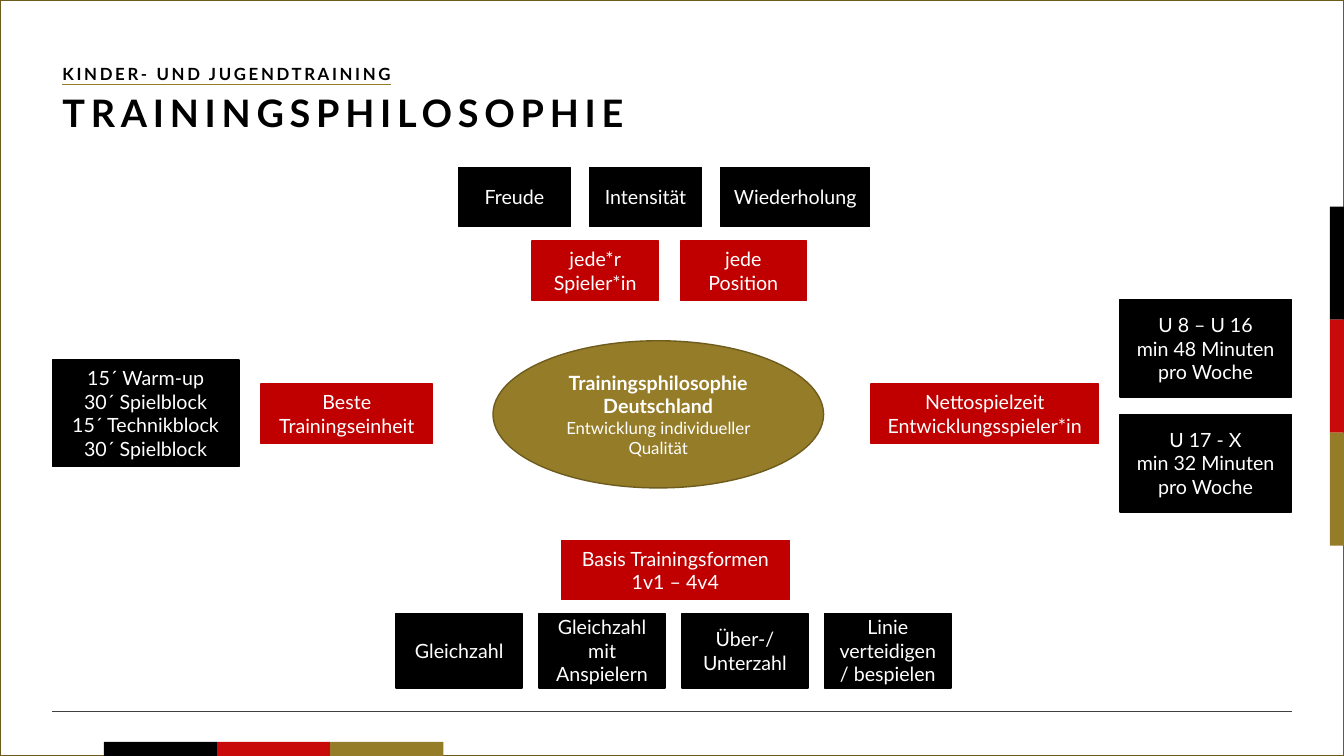
import dataclasses

import lxml.etree
import pptx
import pptx.dml.color
import pptx.enum.shapes
import pptx.enum.text
import pptx.oxml.ns
import pptx.util

SLIDE_WIDTH = pptx.util.Inches(13.33)
SLIDE_HEIGHT = pptx.util.Inches(7.5)
BLACK, RED, GOLD, WHITE = "000000", "C00000", "957C28", "FFFFFF"
FLAG_RED, DARK_GOLD, RULE_GREY = "C80A0A", "6E5C1E", "404040"
LABEL_HEIGHT = 7.87
NARROW, MEDIUM, WIDE = 9.38, 12.75, 16.95
SHAPES = pptx.enum.shapes.MSO_SHAPE
ALIGN = pptx.enum.text.PP_ALIGN
ANCHOR = pptx.enum.text.MSO_ANCHOR


@dataclasses.dataclass
class PercentBox:
    left: float
    top: float
    width: float
    height: float

    def inner(self, left, top, width, height):
        return PercentBox(self.left + left, self.top + top, width, height)

    def lengths(self):
        return (
            round(SLIDE_WIDTH * self.left / 100),
            round(SLIDE_HEIGHT * self.top / 100),
            round(SLIDE_WIDTH * self.width / 100),
            round(SLIDE_HEIGHT * self.height / 100),
        )


def colour(value):
    return pptx.dml.color.RGBColor.from_string(value)


def add_text(frame, text, size=14, color=WHITE, bold=False, align=ALIGN.CENTER,
             tracking=None, underline=None, line_spacing=None):
    para = frame.paragraphs[0]
    if para.runs:
        para = frame.add_paragraph()
    para.alignment = align
    para.space_before = pptx.util.Pt(0)
    if line_spacing:
        para.line_spacing = line_spacing
    span = para.add_run()
    span.text = text
    span.font.name = "Lato"
    span.font.size = pptx.util.Pt(size)
    span.font.bold = bold
    span.font.color.rgb = colour(color)
    properties = span._r.get_or_add_rPr()
    if tracking:
        properties.set("spc", str(round(tracking * 100)))
    if underline:
        span.font.underline = True
        qn = pptx.oxml.ns.qn
        line_fill = lxml.etree.Element(qn("a:uFill"))
        solid = lxml.etree.SubElement(line_fill, qn("a:solidFill"))
        lxml.etree.SubElement(solid, qn("a:srgbClr")).set("val", underline)
        properties.find(qn("a:solidFill")).addnext(line_fill)


def add_block(page, box, fill=None, line=None, kind=SHAPES.RECTANGLE):
    block = page.shapes.add_shape(kind, *box.lengths())
    block.shadow.inherit = False
    if fill:
        block.fill.solid()
        block.fill.fore_color.rgb = colour(fill)
    else:
        block.fill.background()
    if line:
        block.line.color.rgb = colour(line)
        block.line.width = pptx.util.Pt(1)
    else:
        block.line.fill.background()
    block.text_frame.word_wrap = True
    block.text_frame.vertical_anchor = ANCHOR.MIDDLE
    return block


def add_label(page, box, lines, fill):
    label = add_block(page, box, fill, fill)
    for line in lines:
        add_text(label.text_frame, line)


def add_row(page, box, labels, widths, fill):
    gap = (box.width - sum(widths)) / (len(labels) - 1)
    left = 0
    for lines, width in zip(labels, widths):
        add_label(page, box.inner(left, 0, width, box.height), lines, fill)
        left += width + gap


def draw_flag(page, box, vertical):
    for index, fill in enumerate((BLACK, FLAG_RED, GOLD)):
        if vertical:
            height = box.height / 3
            stripe = box.inner(0, index * height, box.width, height)
        else:
            width = box.width / 3
            stripe = box.inner(index * width, 0, width, box.height)
        add_block(page, stripe, fill)


def draw_frame(page, box):
    add_block(page, box, line=DARK_GOLD)
    left, top, width, _ = box.inner(3.9, 94.13, 92.2, 0).lengths()
    rule = page.shapes.add_connector(
        pptx.enum.shapes.MSO_CONNECTOR.STRAIGHT, left, top, left + width, top)
    rule.line.color.rgb = colour(RULE_GREY)
    rule.line.width = pptx.util.Pt(1)
    lxml.etree.SubElement(rule._element.spPr, pptx.oxml.ns.qn("a:effectLst"))
    draw_flag(page, box.inner(98.95, 27.33, 1.05, 44.85), vertical=True)
    draw_flag(page, box.inner(7.73, 98.13, 25.26, 1.87), vertical=False)


def fill_placeholder(holder, box, anchor, text, **style):
    holder.left, holder.top, holder.width, holder.height = box.lengths()
    frame = holder.text_frame
    frame.word_wrap = True
    frame.auto_size = pptx.enum.text.MSO_AUTO_SIZE.NONE
    frame.vertical_anchor = anchor
    add_text(frame, text, color=BLACK, bold=True, align=ALIGN.LEFT,
             line_spacing=0.9, **style)


def draw_heading(page, box):
    fill_placeholder(page.placeholders[1], box.inner(0, 0, 68.55, 4.13), ANCHOR.TOP,
                     "KINDER- UND JUGENDTRAINING", size=12, tracking=1.9, underline=GOLD)
    fill_placeholder(page.shapes.title, box.inner(0, 4.13, box.width, 6.27), ANCHOR.MIDDLE,
                     "TRAININGSPHILOSOPHIE", size=27, tracking=4.1)


def draw_principles(page, box):
    add_row(page, box.inner(0, 0, box.width, LABEL_HEIGHT),
            [["Freude"], ["Intensität"], ["Wiederholung"]], [8.33, 8.33, 11.1], BLACK)
    add_row(page, box.inner(5.48, box.height - LABEL_HEIGHT, 20.4, LABEL_HEIGHT),
            [["jede*r", "Spieler*in"], ["jede", "Position"]], [NARROW] * 2, RED)


def draw_session(page, box):
    add_label(page, box.inner(0, 0, 13.88, box.height),
              ["15´ Warm-up", "30´ Spielblock", "15´ Technikblock", "30´ Spielblock"], BLACK)
    add_label(page, box.inner(box.width - MEDIUM, 3.2, MEDIUM, LABEL_HEIGHT),
              ["Beste Trainingseinheit"], RED)


def draw_playing_time(page, box):
    add_label(page, box.inner(0, 11.2, WIDE, LABEL_HEIGHT),
              ["Nettospielzeit Entwicklungsspieler*in"], RED)
    height = 12.93
    groups = [("U 8 – U 16", "min 48 Minuten pro Woche"),
              ("U 17 - X", "min 32 Minuten pro Woche")]
    for index, lines in enumerate(groups):
        top = index * (box.height - height)
        add_label(page, box.inner(box.width - MEDIUM, top, MEDIUM, height), lines, BLACK)


def draw_training_forms(page, box):
    add_label(page, box.inner(12.3, 0, WIDE, LABEL_HEIGHT),
              ["Basis Trainingsformen 1v1 – 4v4"], RED)
    height = 9.87
    labels = [["Gleichzahl"], ["Gleichzahl mit Anspielern"],
              ["Über-/ Unterzahl"], ["Linie verteidigen / bespielen"]]
    add_row(page, box.inner(0, box.height - height, box.width, height),
            labels, [NARROW] * 4, BLACK)


def draw_core(page, box):
    core = add_block(page, box, GOLD, DARK_GOLD, SHAPES.OVAL)
    add_text(core.text_frame, "Trainingsphilosophie Deutschland", bold=True)
    add_text(core.text_frame, "Entwicklung individueller Qualität", size=12)


def main():
    deck = pptx.Presentation()
    deck.slide_width, deck.slide_height = SLIDE_WIDTH, SLIDE_HEIGHT
    page = deck.slides.add_slide(deck.slide_layouts.get_by_name("Section Header"))
    draw_frame(page, PercentBox(0, 0, 100, 100))
    draw_heading(page, PercentBox(3.9, 8, 92.2, 10.4))
    draw_principles(page, PercentBox(34.12, 22.13, 30.6, 17.6))
    draw_session(page, PercentBox(3.9, 47.6, 28.28, 14.13))
    draw_playing_time(page, PercentBox(64.8, 39.6, 31.28, 28.13))
    draw_training_forms(page, PercentBox(29.48, 71.47, 41.27, 19.53))
    draw_core(page, PercentBox(36.68, 45.07, 24.6, 19.47))
    deck.save("out.pptx")


if __name__ == "__main__":
    main()
